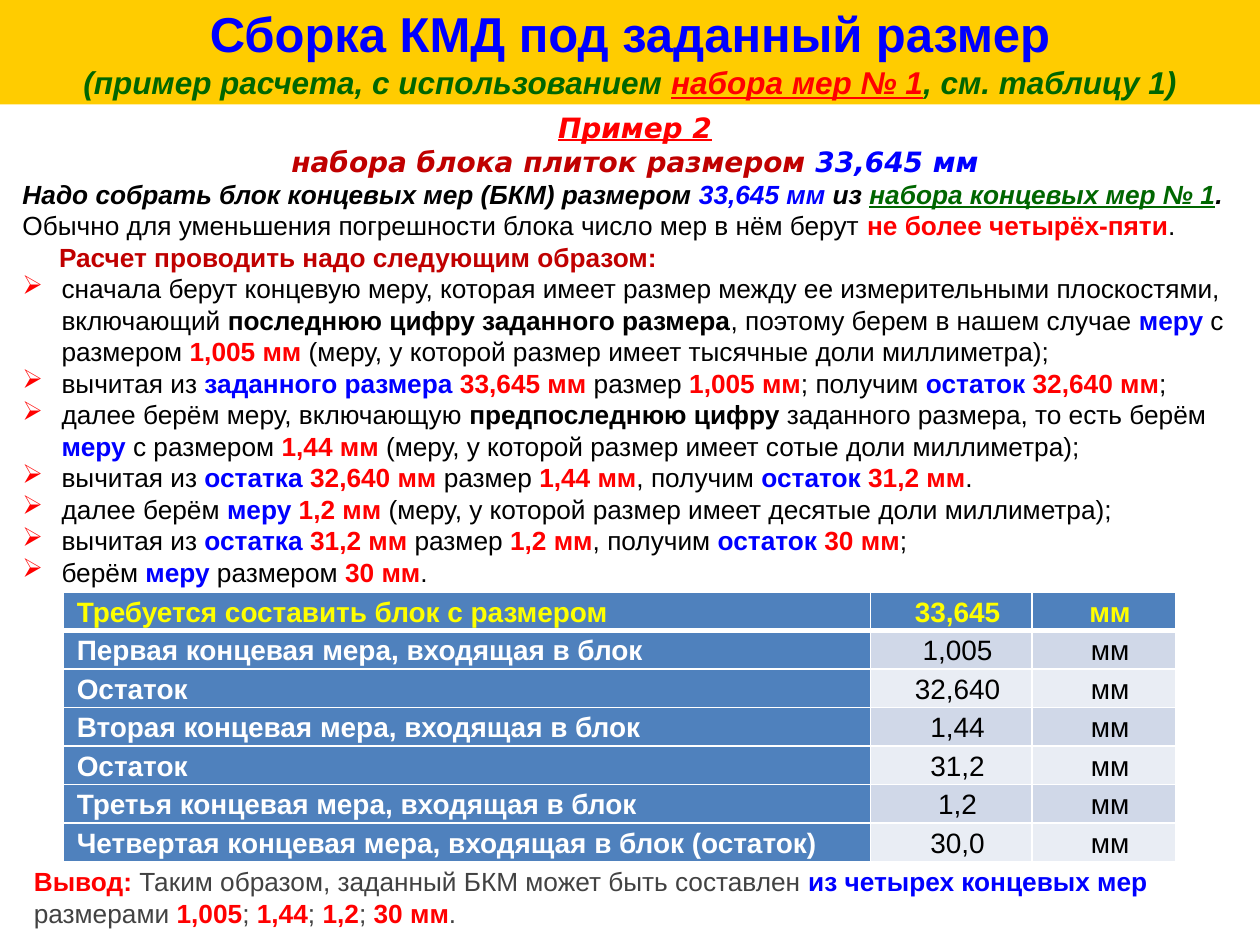
from typing import NamedTuple

from lxml.etree import SubElement
from pptx import Presentation
from pptx.dml.color import RGBColor
from pptx.enum.shapes import MSO_SHAPE
from pptx.enum.text import MSO_ANCHOR, PP_ALIGN
from pptx.oxml.ns import qn
from pptx.util import Inches, Pt

BLACK, WHITE, GRAY = "000000", "FFFFFF", "424242"
RED, DARK, BLUE, GREEN = "FF0000", "C00000", "0000FF", "006600"
GOLD, YELLOW = "FFCC00", "FFFF00"
HEAD, BANDS = "4F81BD", ("D0D8E8", "E9EDF4")


class Run(NamedTuple):
    text: str
    color: str = BLACK
    style: str = ""  # any of b, i, u


class Para(NamedTuple):
    runs: list[Run]
    size: float = 15
    font: str = "Arial"
    align: PP_ALIGN = PP_ALIGN.LEFT
    left: float = 0
    first: float = 0
    mark: str = ""
    lines: float = 1.0


class Row(NamedTuple):
    label: str
    value: str
    unit: str = "мм"


def rgb(code: str) -> RGBColor:
    return RGBColor.from_string(code)


def plain(text: str) -> Run:
    return Run(text)


def bold(text: str) -> Run:
    return Run(text, BLACK, "b")


def blue(text: str) -> Run:
    return Run(text, BLUE, "b")


def red(text: str) -> Run:
    return Run(text, RED, "b")


def gray(text: str) -> Run:
    return Run(text, GRAY)


def step(*runs: Run) -> Para:
    return Para(list(runs), left=0.31, first=-0.31, mark="➢")


def minus(whole: str, start: str, part: str, link: str, rest: str, end: str) -> Para:
    """A step that takes one gauge away from a size."""
    return step(plain("вычитая из "), blue(f"{whole} "), red(f"{start} мм "),
                plain("размер "), red(f"{part} мм"), plain(f"{link} получим "),
                blue("остаток "), red(f"{rest} мм"), plain(end))


def write(frame, paras: list[Para]) -> None:
    frame.word_wrap = True
    for num, para in enumerate(paras):
        line = frame.add_paragraph() if num else frame.paragraphs[0]
        line.alignment = para.align
        line.line_spacing = para.lines
        props = line._p.get_or_add_pPr()
        props.set("marL", str(Inches(para.left)))
        props.set("indent", str(Inches(para.first)))
        if para.mark:
            tint = SubElement(props, qn("a:buClr"))
            SubElement(tint, qn("a:srgbClr"), val=RED)
            SubElement(props, qn("a:buChar"), char=para.mark)
        for text, color, style in para.runs:
            run = line.add_run()
            run.text = text
            font = run.font
            font.name, font.size = para.font, Pt(para.size)
            font.color.rgb = rgb(color)
            font.bold, font.italic, font.underline = (flag in style for flag in "biu")


def text_box(slide, left: float, top: float, width: float, height: float,
             paras: list[Para]) -> None:
    box = slide.shapes.add_textbox(Inches(left), Inches(top), Inches(width), Inches(height))
    write(box.text_frame, paras)


def banner(slide, paras: list[Para]) -> None:
    shape = slide.shapes.add_shape(MSO_SHAPE.RECTANGLE, 0, 0, Inches(10), Inches(0.83))
    shape.shadow.inherit = False
    shape.fill.solid()
    shape.fill.fore_color.rgb = rgb(GOLD)
    shape.line.fill.background()
    shape.text_frame.vertical_anchor = MSO_ANCHOR.MIDDLE
    write(shape.text_frame, paras)


def edge(cell, side: str, width: float) -> None:
    line = SubElement(cell._tc.get_or_add_tcPr(), qn(f"a:ln{side}"), w=str(Pt(width)))
    fill = SubElement(line, qn("a:solidFill"))
    SubElement(fill, qn("a:srgbClr"), val=WHITE)


def table(slide, rows: list[Row], widths: list[float]) -> None:
    height = Inches(2.14)
    grid = slide.shapes.add_table(len(rows), len(widths), Inches(0.5), Inches(4.7),
                                  Inches(sum(widths)), height).table
    for col, width in zip(grid.columns, widths):
        col.width = Inches(width)
    for y, row in enumerate(rows):
        grid.rows[y].height = height // len(rows)
        for x, text in enumerate(row):
            cell = grid.cell(y, x)
            cell.margin_left = cell.margin_right = Inches(0.01)
            cell.margin_top = cell.margin_bottom = Inches(0.01)
            cell.vertical_anchor = MSO_ANCHOR.MIDDLE
            for side in "LRTB":
                thick = (y, side) in ((0, "B"), (1, "T"))
                edge(cell, side, 3 if thick else 1)
            main = y == 0 or x == 0
            cell.fill.solid()
            cell.fill.fore_color.rgb = rgb(HEAD if main else BANDS[(y - 1) % 2])
            color = YELLOW if y == 0 else WHITE if x == 0 else BLACK
            align = PP_ALIGN.CENTER if x else PP_ALIGN.LEFT
            run = Run(text, color, "b" if main else "")
            write(cell.text_frame, [Para([run], 16, align=align, left=0.1, lines=1.07)])


MID = PP_ALIGN.CENTER
TITLE = [
    Para([Run("Сборка КМД под заданный размер", BLUE, "b")], 28, align=MID),
    Para([Run("(пример расчета, с использованием ", GREEN, "bi"),
          Run("набора мер № 1", RED, "biu"),
          Run(", см. таблицу 1)", GREEN, "bi")], 18, align=MID),
]
BODY = [
    Para([Run("Пример 2", RED, "biu")], 16, "DejaVu Sans", MID),
    Para([Run("набора блока плиток размером ", DARK, "bi"),
          Run("33,645 мм", BLUE, "bi")], 16, "DejaVu Sans", MID),
    Para([Run("Надо собрать блок концевых мер (БКМ) размером ", BLACK, "bi"),
          Run("33,645 мм ", BLUE, "bi"), Run("из ", BLACK, "bi"),
          Run("набора концевых мер № 1", GREEN, "biu"), Run(". ", BLACK, "bi"),
          plain("Обычно для уменьшения погрешности блока число мер в нём берут "),
          red("не более четырёх-пяти"), plain(".")]),
    Para([Run("Расчет проводить надо следующим образом:", DARK, "b")], first=0.29),
    step(plain("сначала берут концевую меру, которая имеет размер между ее "
               "измерительными плоскостями, включающий "),
         bold("последнюю цифру заданного размера"),
         plain(", поэтому берем в нашем случае "), blue("меру"),
         plain(" с размером "), red("1,005 мм "),
         plain("(меру, у которой размер имеет тысячные доли миллиметра);")),
    minus("заданного размера", "33,645", "1,005", ";", "32,640", ";"),
    step(plain("далее берём меру, включающую "), bold("предпоследнюю цифру "),
         plain("заданного размера, то есть берём "), blue("меру"),
         plain(" с размером "), red("1,44 мм "),
         plain("(меру, у которой размер имеет сотые доли миллиметра);")),
    minus("остатка", "32,640", "1,44", ",", "31,2", "."),
    step(plain("далее берём "), blue("меру "), red("1,2 мм "),
         plain("(меру, у которой размер имеет десятые доли миллиметра);")),
    minus("остатка", "31,2", "1,2", ",", "30", ";"),
    step(plain("берём "), blue("меру "), plain("размером "), red("30 мм"), plain(".")),
]
ROWS = [
    Row("Требуется составить блок с размером", "33,645"),
    Row("Первая концевая мера, входящая в блок", "1,005"),
    Row("Остаток", "32,640"),
    Row("Вторая концевая мера, входящая в блок", "1,44"),
    Row("Остаток", "31,2"),
    Row("Третья концевая мера, входящая в блок", "1,2"),
    Row("Четвертая концевая мера, входящая в блок (остаток)", "30,0"),
]
CLOSE = [Para([
    red("Вывод: "), gray("Таким образом, заданный БКМ может быть составлен "),
    blue("из четырех концевых мер "), gray("размерами "),
    red("1,005"), gray("; "), red("1,44"), gray("; "), red("1,2"), gray("; "),
    red("30 мм"), gray("."),
])]


def main() -> None:
    deck = Presentation()
    deck.slide_width, deck.slide_height = Inches(10), Inches(7.5)
    slide = deck.slides.add_slide(deck.slide_layouts[6])
    banner(slide, TITLE)
    text_box(slide, 0.08, 0.83, 9.92, 3.92, BODY)
    table(slide, ROWS, [6.41, 1.28, 1.14])
    text_box(slide, 0.17, 6.82, 9.75, 0.61, CLOSE)
    deck.save("out.pptx")


if __name__ == "__main__":
    main()
